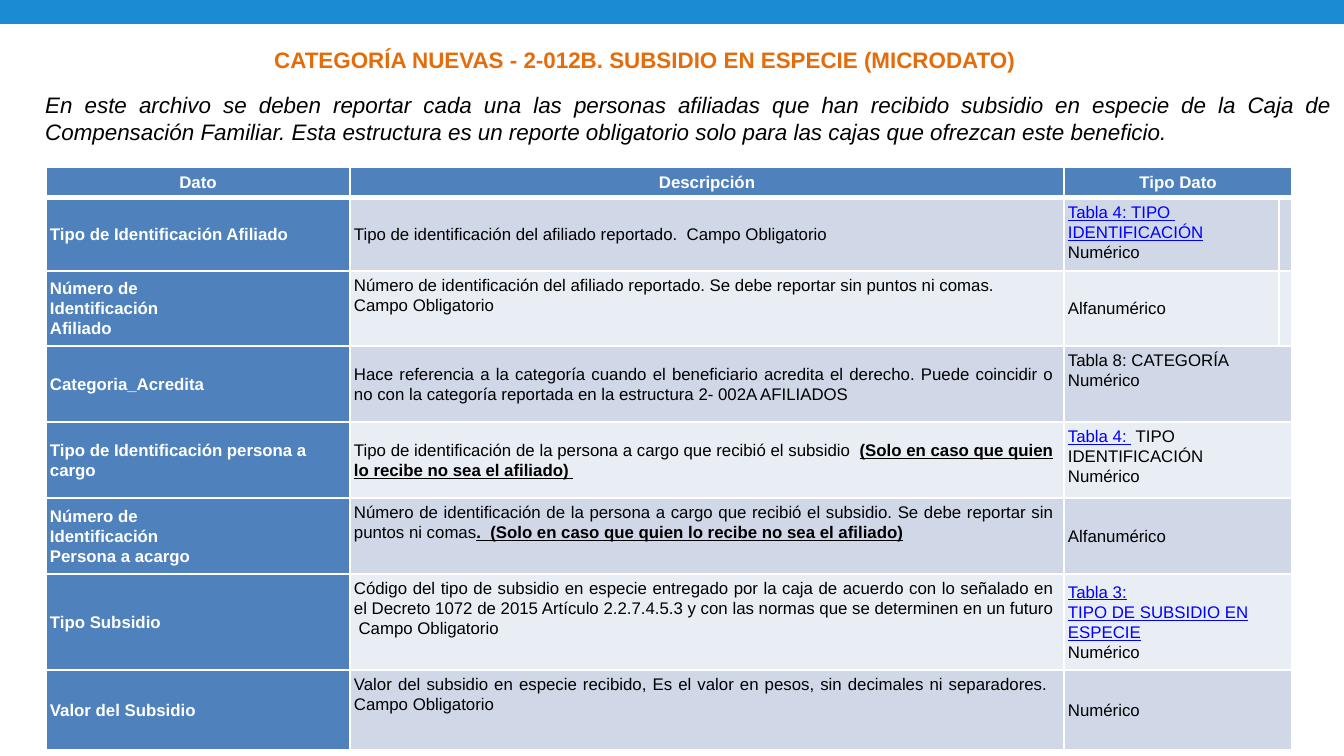
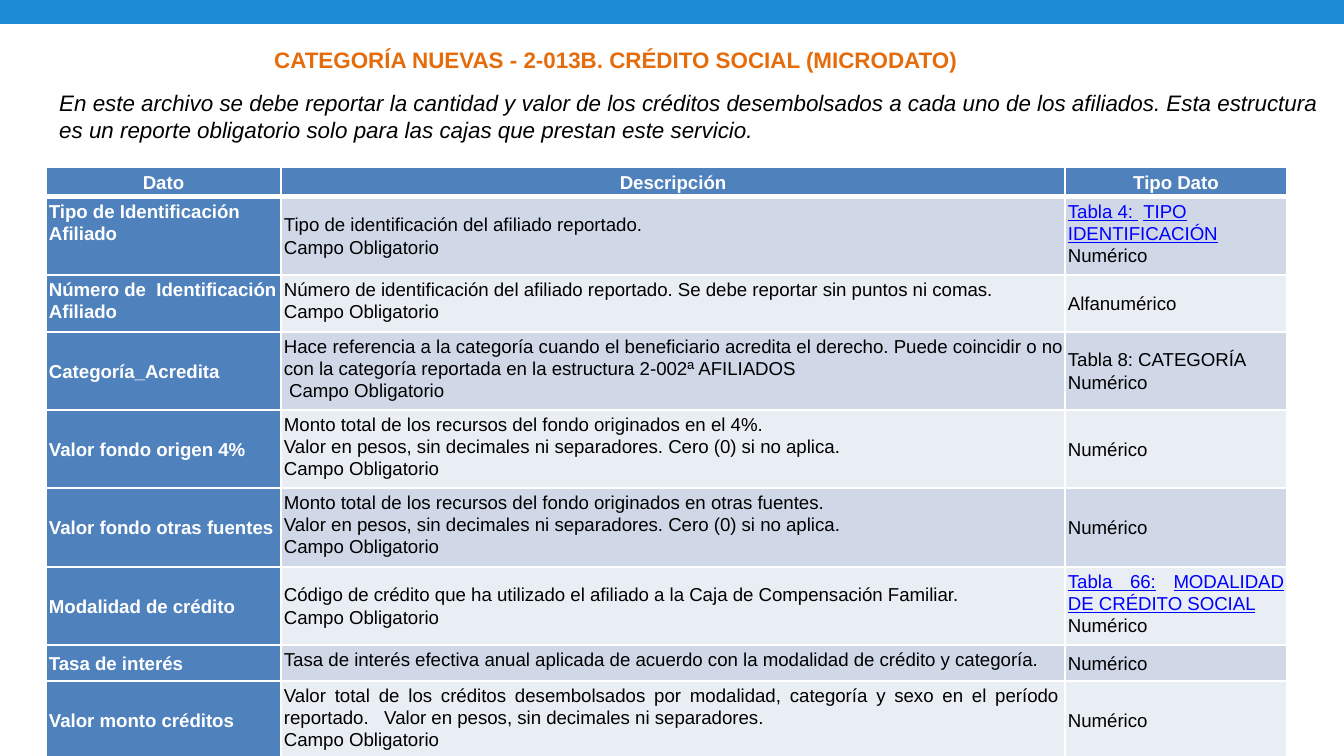
from lxml import etree
from pptx import Presentation
from pptx.dml.color import RGBColor
from pptx.enum.shapes import MSO_SHAPE
from pptx.enum.text import MSO_ANCHOR, MSO_AUTO_SIZE, PP_ALIGN
from pptx.oxml.ns import qn
from pptx.util import Pt

LEFT, CENTER, JUST = PP_ALIGN.LEFT, PP_ALIGN.CENTER, PP_ALIGN.JUSTIFY
TOP, MIDDLE = MSO_ANCHOR.TOP, MSO_ANCHOR.MIDDLE
GROW = MSO_AUTO_SIZE.SHAPE_TO_FIT_TEXT
RECT = MSO_SHAPE.RECTANGLE

BAND = RGBColor(0x1B, 0x8B, 0xD4)
ORANGE = RGBColor(0xE4, 0x6C, 0x0A)
HEAD = RGBColor(0x4F, 0x81, 0xBD)
TINTS = RGBColor(0xE9, 0xED, 0xF4), RGBColor(0xD0, 0xD8, 0xE8)
WHITE = RGBColor(255, 255, 255)
BLACK = RGBColor(0, 0, 0)
BLUE = RGBColor(0, 0, 255)
FONT = "Arial"
WIDE, HIGH = 1344, 756
SCALE = 914400 / 134.4


def px(n):
    return round(n * SCALE)


def link(text):
    return text, {"color": BLUE, "under": True}


def stress(text):
    return text, {"bold": True, "under": True}


HEADS = ["Dato", "Descripción", "Tipo Dato"]
FIELD = "Campo Obligatorio"
NUM, ALPHA = "Numérico", "Alfanumérico"
REPORT = "Tipo de identificación del afiliado reportado. "
NUMBER = "Número de identificación del afiliado reportado. Se debe reportar sin puntos ni comas. "
CATEG = ("Hace referencia a la categoría cuando el beneficiario acredita el derecho. "
         "Puede coincidir o no con la categoría reportada en la estructura ")
FUND = "Monto total de los recursos del fondo originados en "
PESOS = "Valor en pesos, sin decimales ni separadores. "
ZERO = PESOS + "Cero (0) si no aplica. "
ONLY = "(Solo en caso que quien lo recibe no sea el afiliado)"

# Row: height, anchors (M middle, T top, J top and justified),
# right inset of the description, then three cells.
# A cell is a list of paragraphs; a paragraph is a string or a list of runs.
KIND = [
    (73, "MMT", 8, ["Tipo de Identificación Afiliado"], [REPORT + " " + FIELD],
     [[link("Tabla 4: TIPO "), " ", link("IDENTIFICACIÓN")], NUM]),
    (75, "MTM", 8, ["Número de", "Identificación", "Afiliado"],
     [NUMBER, FIELD], [ALPHA]),
    (76, "MMT", 11, ["Categoria_Acredita"], [CATEG + "2- 002A AFILIADOS"],
     ["Tabla 8: CATEGORÍA", NUM]),
    (76, "MMT", 11, ["Tipo de Identificación persona a cargo"],
     [["Tipo de identificación de la persona a cargo que recibió el subsidio  ",
       stress(ONLY + " ")]],
     [[link("Tabla 4: "), " TIPO  IDENTIFICACIÓN"], NUM]),
    (76, "MTM", 11, ["Número de", "Identificación", "Persona a acargo"],
     [["Número de identificación de la persona a cargo que recibió el subsidio. "
       "Se debe reportar sin puntos ni comas", stress(".  " + ONLY)]], [ALPHA]),
    (96, "MTM", 11, ["Tipo Subsidio"],
     ["Código del tipo de subsidio en especie entregado por la caja de acuerdo con "
      "lo señalado en el Decreto 1072 de 2015 Artículo 2.2.7.4.5.3 y con las normas "
      "que se determinen en un futuro  " + FIELD],
     [[link("Tabla 3:")], [link("TIPO DE SUBSIDIO EN ESPECIE")], NUM]),
    (80, "MTM", 11, ["Valor del Subsidio"],
     ["Valor del subsidio en especie recibido, Es el valor en pesos, "
      "sin decimales ni separadores.  " + FIELD], [NUM]),
]
CREDIT = [
    (78, "TMT", 3, ["Tipo de Identificación Afiliado"], [REPORT, FIELD],
     [[link("Tabla 4: "), " ", link("TIPO")],
      [link("IDENTIFICACIÓN"), "  " + NUM]]),
    (57, "TTM", 3, ["Número de  Identificación", "Afiliado"],
     [NUMBER, FIELD], [ALPHA]),
    (78, "MTM", 3, ["Categoría_Acredita"],
     [CATEG + "2-002ª AFILIADOS", " " + FIELD], ["Tabla 8: CATEGORÍA " + NUM]),
    (78, "MTM", 3, ["Valor fondo origen 4%"],
     [FUND + "el 4%. ", ZERO, FIELD], [NUM]),
    (79, "MTM", 3, ["Valor fondo otras fuentes"],
     [FUND + "otras fuentes. ", ZERO, FIELD], [NUM]),
    (78, "MMJ", 5, ["Modalidad de crédito"],
     ["Código de crédito que ha utilizado el afiliado a la "
      "Caja de Compensación Familiar.", FIELD],
     [[link("Tabla 66:"), " ", link("MODALIDAD DE CRÉDITO SOCIAL")], NUM]),
    (36, "MTM", 5, ["Tasa de interés"],
     ["Tasa de interés efectiva anual aplicada de acuerdo con la modalidad de "
      "crédito y categoría."], [NUM]),
    (80, "MTM", 7, ["Valor monto créditos"],
     ["Valor total de los créditos desembolsados por modalidad, categoría y sexo "
      "en el período reportado.   " + PESOS, FIELD], [NUM]),
]

SLIDES = [
    dict(title="CATEGORÍA NUEVAS - 2-012B. SUBSIDIO EN ESPECIE (MICRODATO)",
         intro="En este archivo se deben reportar cada una las personas afiliadas que "
               "han recibido subsidio en especie de la Caja de Compensación Familiar. "
               "Esta estructura es un reporte obligatorio solo para las cajas que "
               "ofrezcan este beneficio.",
         box=(32, 85, 1314, 67), align=JUST, cols=(304, 714, 215, 13),
         top=31, size=9, pad=4, split=(1, 2), rows=KIND),
    dict(title="CATEGORÍA NUEVAS - 2-013B. CRÉDITO SOCIAL (MICRODATO)",
         intro="En este archivo se debe reportar la cantidad y valor de los créditos "
               "desembolsados a cada uno de los afiliados. Esta estructura es un "
               "reporte obligatorio solo para las cajas que prestan este servicio.",
         box=(46, 83, 1298, 67), align=LEFT, cols=(235, 784, 222),
         top=30, size=10, pad=3, split=(), rows=CREDIT),
]


def add_run(para, text, size, color, bold=False, under=False, italic=False):
    run = para.add_run()
    run.text = text
    font = run.font
    font.name, font.size, font.bold = FONT, Pt(size), bold
    font.italic, font.underline = italic, under
    font.color.rgb = color


def add_text(slide, box, text, align=LEFT, **style):
    shape = slide.shapes.add_textbox(*map(px, box))
    frame = shape.text_frame
    frame.word_wrap = True
    frame.auto_size = GROW
    para = frame.paragraphs[0]
    para.alignment = align
    add_run(para, text, 12, **style)


def add_lines(cell, head):
    """White borders, with a thick one under the header."""
    props = cell._tc.get_or_add_tcPr()
    for side in "LRTB":
        width = Pt(3 if head and side == "B" else 1)
        line = etree.SubElement(props, qn("a:ln" + side), w=str(width))
        fill = etree.SubElement(line, qn("a:solidFill"))
        etree.SubElement(fill, qn("a:srgbClr"), val=str(WHITE))


def fill_cell(cell, paras, size, align, base):
    frame = cell.text_frame
    for i, runs in enumerate(paras):
        para = frame.add_paragraph() if i else frame.paragraphs[0]
        para.alignment, para.line_spacing = align, 1.07
        for run in [runs] if isinstance(runs, str) else runs:
            text, style = (run, {}) if isinstance(run, str) else run
            add_run(para, text, size, **{**base, **style})


def add_grid(slide, cols, top, size, pad, split, rows):
    head = (top, "MMM", pad, *([name] for name in HEADS))
    rows = [head, *rows]
    tall = sum(row[0] for row in rows)
    frame = slide.shapes.add_table(len(rows), len(cols), px(46), px(167),
                                   px(sum(cols)), px(tall))
    grid = frame.table
    grid.first_row = grid.horz_banding = False
    for col, width in zip(grid.columns, cols):
        col.width = px(width)
    for r, (height, marks, right, *cells) in enumerate(rows):
        grid.rows[r].height = px(height)
        for c in range(len(cols)):
            cell = grid.cell(r, c)
            dark = r == 0 or c == 0
            add_lines(cell, r == 0)
            cell.fill.solid()
            cell.fill.fore_color.rgb = HEAD if dark else TINTS[r % 2]
            cell.margin_left = cell.margin_top = cell.margin_bottom = px(pad)
            cell.margin_right = px(right if c == 1 else pad)
            if c >= len(cells):
                continue
            mark = marks[c]
            cell.vertical_anchor = MIDDLE if mark == "M" else TOP
            align = CENTER if r == 0 else JUST if c == 1 or mark == "J" else LEFT
            base = {"color": WHITE if dark else BLACK, "bold": dark}
            fill_cell(cell, cells[c], size, align, base)
        if len(cols) > len(HEADS) and r not in split:
            grid.cell(r, 2).merge(grid.cell(r, 3))


def add_slide(deck, title, intro, box, align, **grid):
    slide = deck.slides.add_slide(deck.slide_layouts[6])
    band = slide.shapes.add_shape(RECT, 0, px(-1), px(WIDE), px(25))
    band.shadow.inherit = False
    band.fill.solid()
    band.fill.fore_color.rgb = BAND
    band.line.fill.background()
    add_text(slide, (261, 40, 797, 40), title, color=ORANGE, bold=True)
    add_grid(slide, **grid)
    add_text(slide, box, intro, align, color=BLACK, italic=True)


def main():
    deck = Presentation()
    deck.slide_width, deck.slide_height = px(WIDE), px(HIGH)
    for data in SLIDES:
        add_slide(deck, **data)
    deck.save("out.pptx")


if __name__ == "__main__":
    main()
